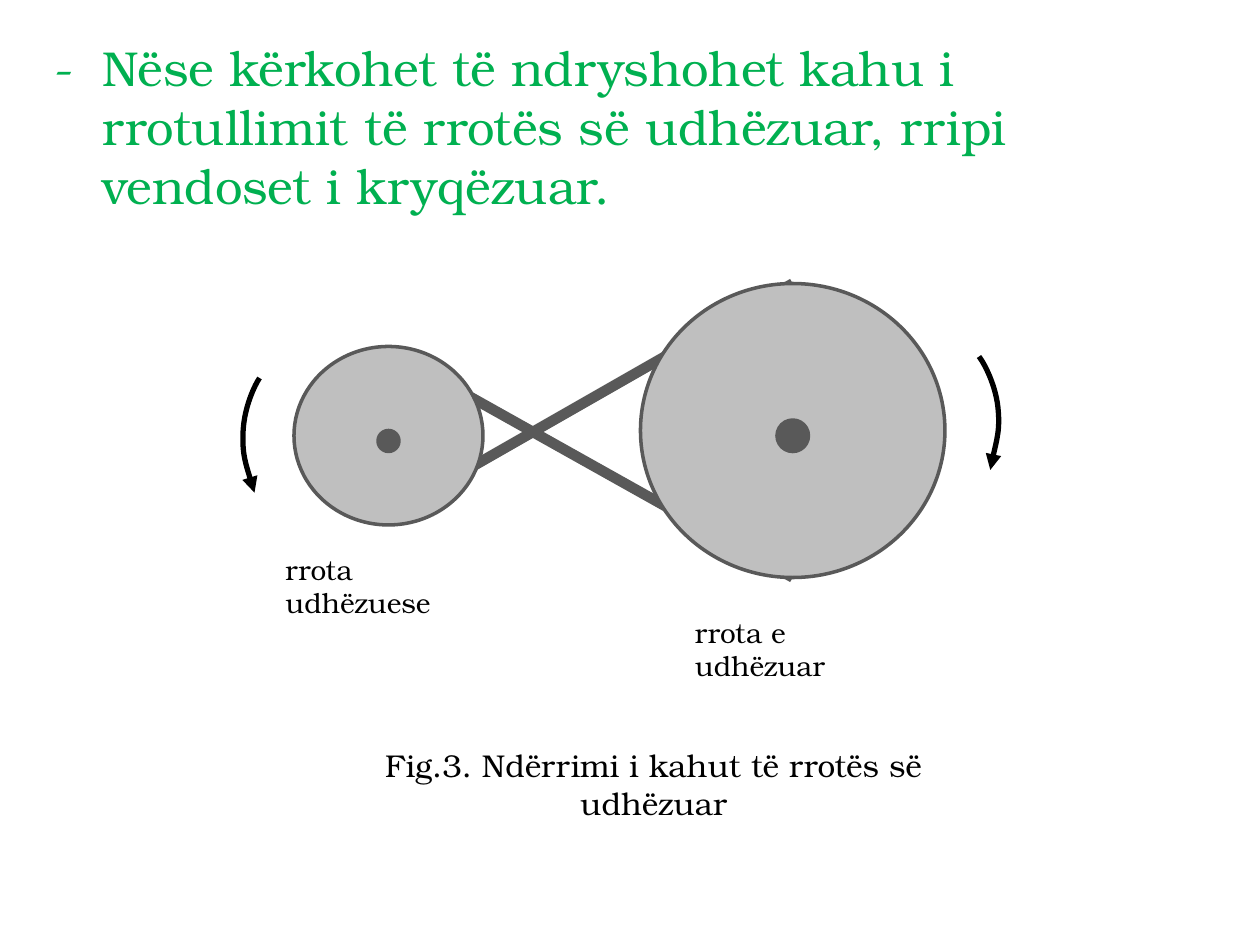
from lxml import etree
from pptx import Presentation
from pptx.dml.color import RGBColor
from pptx.enum.shapes import MSO_CONNECTOR, MSO_SHAPE
from pptx.enum.text import PP_ALIGN
from pptx.oxml.ns import qn
from pptx.util import Inches, Pt

STRAIGHT = MSO_CONNECTOR.STRAIGHT
ELLIPSE = MSO_SHAPE.OVAL
LEFT, CENTER = PP_ALIGN.LEFT, PP_ALIGN.CENTER

GREEN = RGBColor(0x00, 0xB0, 0x50)
DARK_GRAY = RGBColor(0x59, 0x59, 0x59)
LIGHT_GRAY = RGBColor(0xBF, 0xBF, 0xBF)
BLACK = RGBColor(0x00, 0x00, 0x00)
FONT = "TeX Gyre Bonum"

COLUMNS, ROWS = 120, 90  # grid of 1/12 inch cells
CELL = Inches(10) // COLUMNS


def grid(*cells):
    return [round(cell * CELL) for cell in cells]


def set_font(paragraph, size, color):
    paragraph.font.name = FONT
    paragraph.font.size = Pt(size)
    paragraph.font.color.rgb = color


def fill_statement(body, text):
    body.left, body.top, body.width, body.height = grid(4, 3, 112, 83)
    statement = body.text_frame.paragraphs[0]
    statement.text = text
    set_font(statement, 28, GREEN)
    # Hanging indent, with the dash as the first word
    properties = statement._p.get_or_add_pPr()
    properties.set("marL", str(Inches(0.38)))
    properties.set("indent", str(-Inches(0.38)))
    properties.insert(0, properties.makeelement(qn("a:buNone"), {}))


def add_belt(slide, start, end):
    belt = slide.shapes.add_connector(STRAIGHT, *grid(*start, *end))
    belt.line.color.rgb = DARK_GRAY
    belt.line.width = Pt(6)
    etree.SubElement(belt._element.spPr, qn("a:effectLst"))


def add_disc(slide, box, color):
    disc = slide.shapes.add_shape(ELLIPSE, *grid(*box))
    disc.shadow.inherit = False
    disc.fill.solid()
    disc.fill.fore_color.rgb = color
    disc.line.color.rgb = DARK_GRAY
    disc.line.width = Pt(2)


def add_label(slide, text, box, size, align=LEFT):
    frame = slide.shapes.add_textbox(*grid(*box)).text_frame
    frame.word_wrap = True
    label = frame.paragraphs[0]
    label.text = text
    label.alignment = align
    set_font(label, size, BLACK)


def add_turn_arrow(slide, points):
    """Draw a curved arrow; after the start, each three points are one Bézier curve."""
    start, *controls = [(Inches(x), Inches(y)) for x, y in points]
    builder = slide.shapes.build_freeform(*start)
    builder.add_line_segments(controls, close=False)
    arrow = builder.convert_to_shape()
    arrow.shadow.inherit = False
    arrow.fill.background()
    arrow.line.color.rgb = BLACK
    arrow.line.width = Pt(3)
    etree.SubElement(arrow.line._get_or_add_ln(), qn("a:tailEnd"), type="triangle")
    # Turn the straight segments into cubic curves
    path = next(arrow._element.iter(qn("a:path")))
    segments = path.findall(qn("a:lnTo"))
    for first in range(0, len(segments), 3):
        curve = etree.SubElement(path, qn("a:cubicBezTo"))
        for segment in segments[first:first + 3]:
            curve.append(segment[0])
            path.remove(segment)


def main():
    presentation = Presentation()
    presentation.slide_width, presentation.slide_height = grid(COLUMNS, ROWS)
    slide = presentation.slides.add_slide(presentation.slide_layouts[1])
    title = slide.shapes.title._element
    title.getparent().remove(title)

    # Statement
    fill_statement(
        slide.placeholders[1],
        "-\tNëse kërkohet të ndryshohet kahu i rrotullimit të rrotës së udhëzuar, "
        "rripi vendoset i kryqëzuar.",
    )

    # Crossed belt, behind the wheels
    add_belt(slide, (38, 34), (75.5, 55))
    add_belt(slide, (37, 49), (75.5, 27))

    # Driven and driving wheels, then their hubs
    add_disc(slide, (61, 27, 29, 28), LIGHT_GRAY)
    add_disc(slide, (28, 33, 18, 17), LIGHT_GRAY)
    add_disc(slide, (74, 40, 3, 3), DARK_GRAY)
    add_disc(slide, (36, 41, 2, 2), DARK_GRAY)

    # Wheel names
    add_label(slide, "rrota udhëzuese", (26, 52, 22.3, 4.4), 16)
    add_label(slide, "rrota e udhëzuar", (65, 58, 22.8, 4.4), 16)

    # Directions of rotation
    add_turn_arrow(slide, [(7.77, 2.83), (7.81, 2.88), (7.9, 3.05), (7.92, 3.23),
                           (7.94, 3.41), (7.89, 3.57), (7.86, 3.73)])
    add_turn_arrow(slide, [(2.06, 3), (2.02, 3.06), (1.94, 3.23), (1.93, 3.42),
                           (1.92, 3.6), (1.97, 3.75), (2.02, 3.91)])

    # Caption
    add_label(slide, "Fig.3. Ndërrimi i kahut të rrotës së udhëzuar",
              (30.4, 70.5, 63.7, 4.8), 18, CENTER)

    presentation.save("out.pptx")


if __name__ == "__main__":
    main()
